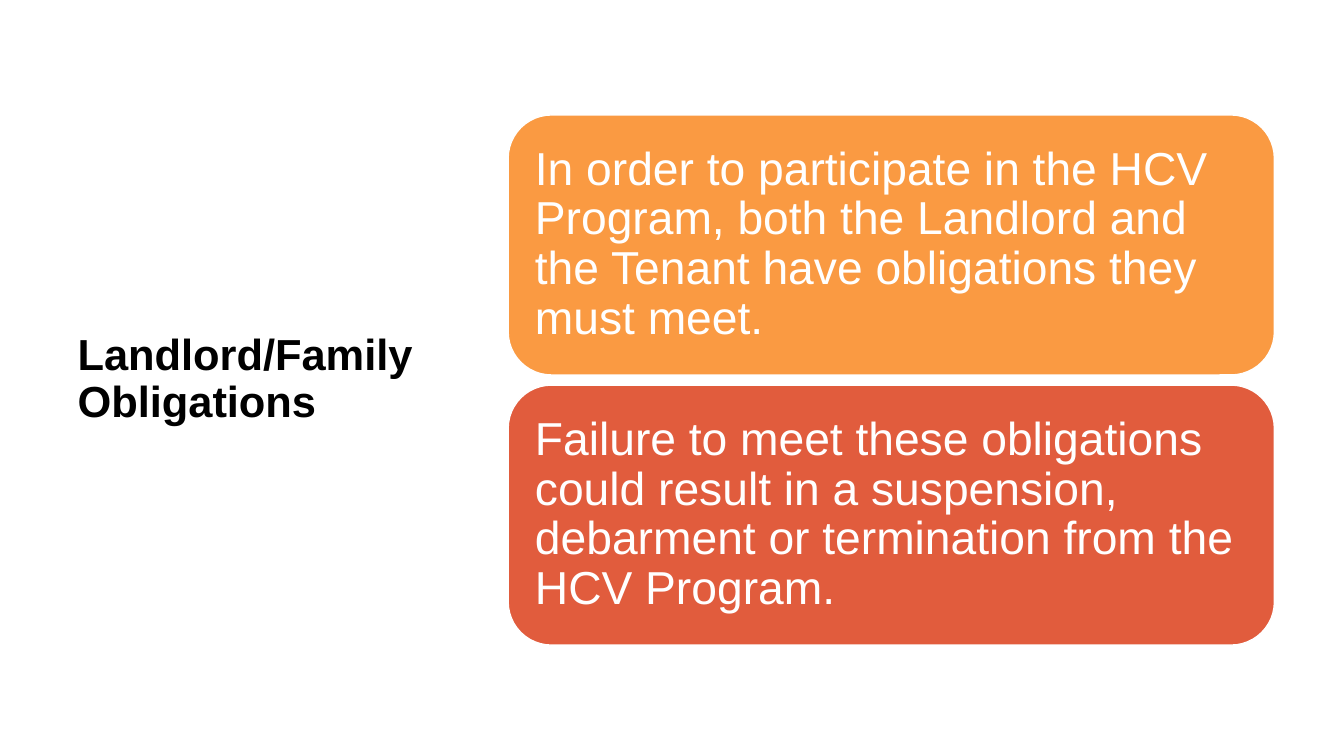
from dataclasses import dataclass

from pptx import Presentation
from pptx import util as u
from pptx.dml.color import RGBColor
from pptx.enum import shapes, text
from pptx.slide import Slide
from pptx.text.text import TextFrame

PX = u.Inches(1) // 100
BLACK = RGBColor(0x00, 0x00, 0x00)
WHITE = RGBColor(0xFF, 0xFF, 0xFF)
ORANGE = RGBColor(0xFA, 0x9A, 0x42)
RED = RGBColor(0xE1, 0x5C, 0x3D)

CARD_LEFT, CARD_TOP = 504, 114
CARD_WIDTH, CARD_HEIGHT = 760, 258
CARD_STEP = 268
CARD_INSET = 14


@dataclass(frozen=True)
class Card:
    wording: str
    fill: RGBColor


CARDS = [
    Card("In order to participate in the HCV Program, both the Landlord and "
         "the Tenant have obligations they must meet.", ORANGE),
    Card("Failure to meet these obligations could result in a suspension, "
         "debarment or termination from the HCV Program.", RED),
]


def write(frame: TextFrame, wording: str, size: int, color: RGBColor, bold: bool) -> None:
    """Fill a frame with one left-aligned, vertically centred paragraph."""
    frame.word_wrap = True
    frame.auto_size = text.MSO_AUTO_SIZE.NONE
    frame.vertical_anchor = text.MSO_ANCHOR.MIDDLE
    para = frame.paragraphs[0]
    para.text = wording
    para.alignment = text.PP_ALIGN.LEFT
    para.line_spacing = 0.9
    para.font.name = "Arial"
    para.font.size = u.Pt(size)
    para.font.bold = bold
    para.font.color.rgb = color


def add_title(page: Slide) -> None:
    title = page.shapes.title
    title.left, title.top = 67 * PX, 60 * PX
    title.width, title.height = 382 * PX, 633 * PX
    write(title.text_frame, "Landlord/Family Obligations", 31, BLACK, True)


def add_card(page: Slide, card: Card, top: int) -> None:
    box = page.shapes.add_shape(
        shapes.MSO_SHAPE.ROUNDED_RECTANGLE,
        CARD_LEFT * PX, top * PX, CARD_WIDTH * PX, CARD_HEIGHT * PX)
    box.shadow.inherit = False
    box.fill.solid()
    box.fill.fore_color.rgb = card.fill
    box.line.color.rgb = WHITE
    box.line.width = u.Pt(1)
    frame = box.text_frame
    frame.margin_left = frame.margin_right = CARD_INSET * PX
    frame.margin_top = frame.margin_bottom = CARD_INSET * PX
    write(frame, card.wording, 33, WHITE, False)


def main() -> None:
    deck = Presentation()
    deck.slide_width, deck.slide_height = 1333 * PX, 750 * PX
    title_only = deck.slide_layouts[5]
    page = deck.slides.add_slide(title_only)
    add_title(page)
    for index, card in enumerate(CARDS):
        add_card(page, card, CARD_TOP + index * CARD_STEP)
    deck.save("out.pptx")


if __name__ == "__main__":
    main()
